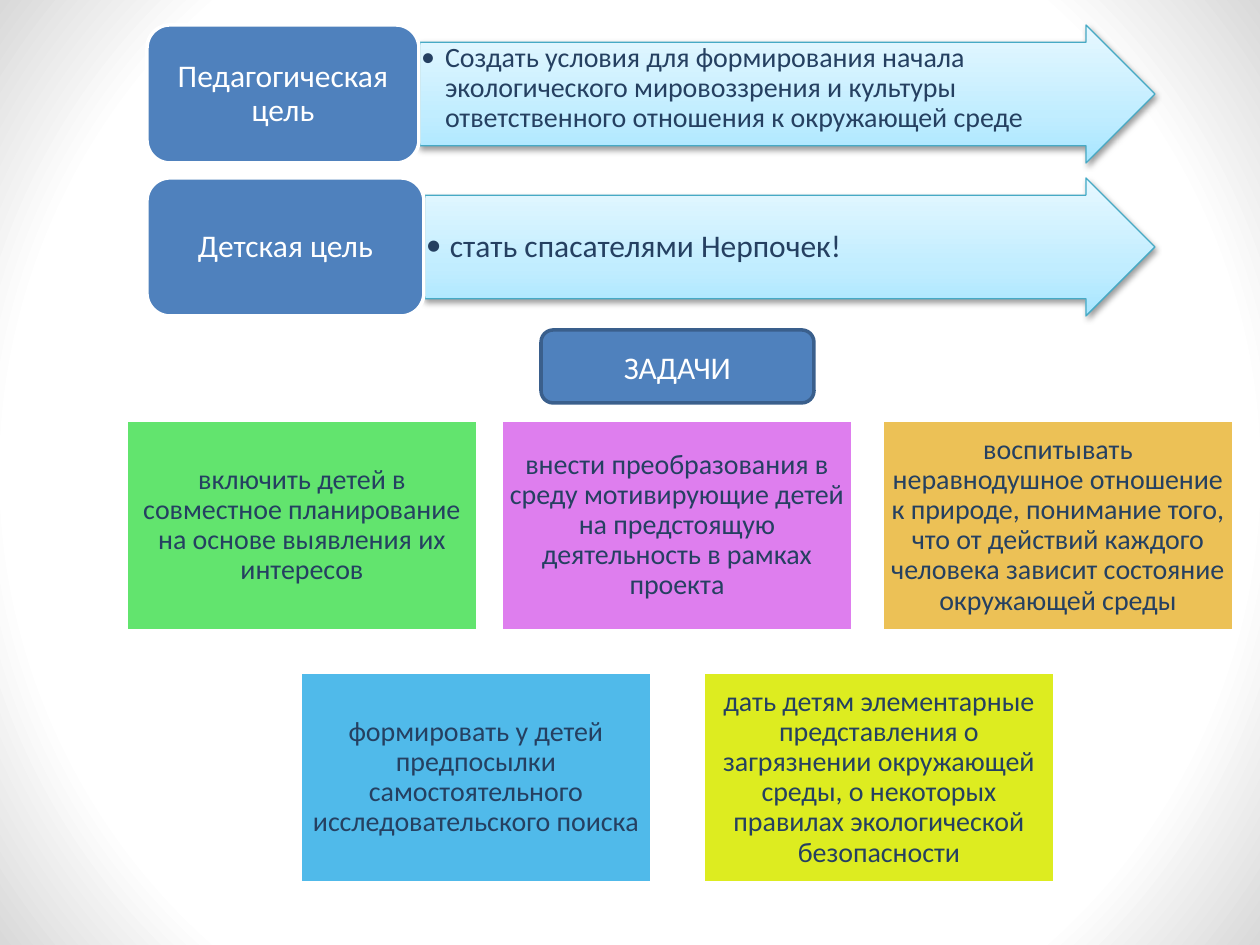
from lxml import etree
from pptx import Presentation
from pptx.dml.color import RGBColor
from pptx.enum.shapes import MSO_SHAPE
from pptx.enum.text import MSO_ANCHOR, PP_ALIGN
from pptx.oxml.ns import qn
from pptx.util import Emu, Pt

RECT, ROUNDED = MSO_SHAPE.RECTANGLE, MSO_SHAPE.ROUNDED_RECTANGLE
ARROW = MSO_SHAPE.RIGHT_ARROW
TOP, MIDDLE = MSO_ANCHOR.TOP, MSO_ANCHOR.MIDDLE
CENTER, LEFT = PP_ALIGN.CENTER, PP_ALIGN.LEFT

WIDTH, HEIGHT = 1260, 945
NAVY, BLUE, WHITE = "254061", "4F81BD", "FFFFFF"
FONT = "Calibri"

GOALS = [
    (25, 272, "Педагогическая цель", 16,
     "Создать условия для формирования начала экологического мировоззрения "
     "и культуры ответственного отношения к окружающей среде", TOP),
    (178, 277, "Детская цель", 18, "стать спасателями Нерпочек!", MIDDLE),
]
TASK_ROWS = [
    (420, [
        (126, "62E46E", "включить детей в совместное планирование на основе "
                        "выявления их интересов"),
        (501, "DE7EEE", "внести преобразования в среду мотивирующие детей на "
                        "предстоящую деятельность в рамках проекта"),
        (882, "ECC156", "воспитывать неравнодушное отношение к природе, "
                        "понимание того, что от действий каждого человека "
                        "зависит состояние окружающей среды"),
    ]),
    (672, [
        (300, "50BAEA", "формировать у детей предпосылки самостоятельного "
                        "исследовательского поиска"),
        (703, "DDEC20", "дать детям элементарные представления о загрязнении "
                        "окружающей среды, о некоторых правилах экологической "
                        "безопасности"),
    ]),
]


def px(length):
    return Emu(round(length * 914400 / 126))


def color(value):
    return RGBColor.from_string(value)


def add_child(parent, tag, **attributes):
    child = etree.SubElement(parent, qn(tag))
    for name, value in attributes.items():
        child.set(name, str(value))
    return child


def add_box(page, kind, box, fill=None, line=None, line_width=2):
    shape = page.shapes.add_shape(kind, *map(px, box))
    shape.shadow.inherit = False
    if fill:
        shape.fill.solid()
        shape.fill.fore_color.rgb = color(fill)
    if line:
        shape.line.color.rgb = color(line)
        shape.line.width = Pt(line_width)
    else:
        shape.line.fill.background()
    return shape


def set_gradient(shape, stops, angle=None):
    """Fill with (percent, colour) stops: linear at an angle, else from the centre."""
    shape.fill.gradient()
    gradient = shape._element.spPr.find(qn("a:gradFill"))
    for child in list(gradient):
        gradient.remove(child)
    stop_list = add_child(gradient, "a:gsLst")
    for percent, value in stops:
        stop = add_child(stop_list, "a:gs", pos=percent * 1000)
        add_child(stop, "a:srgbClr", val=value)
    if angle is None:
        circle = add_child(gradient, "a:path", path="circle")
        add_child(circle, "a:fillToRect", l=50000, t=50000, r=50000, b=50000)
    else:
        add_child(gradient, "a:lin", ang=angle * 60000, scaled=1)


def add_shadow(shape):
    effects = shape._element.spPr.find(qn("a:effectLst"))
    shadow = add_child(effects, "a:outerShdw", blurRad=40000, dist=20000,
                       dir=5400000, rotWithShape=0)
    black = add_child(shadow, "a:srgbClr", val="000000")
    add_child(black, "a:alpha", val=38000)


def write(shape, text, size=16, ink=NAVY, align=CENTER, anchor=MIDDLE,
          insets=(8, 8, 8, 8), spacing=0.9, bullet=False):
    frame = shape.text_frame
    frame.word_wrap = True
    frame.vertical_anchor = anchor
    (frame.margin_left, frame.margin_top,
     frame.margin_right, frame.margin_bottom) = map(px, insets)
    para = frame.paragraphs[0]
    para.alignment = align
    para.line_spacing = spacing
    if bullet:
        properties = para._p.get_or_add_pPr()
        properties.set("marL", str(px(24)))
        properties.set("indent", str(-px(24)))
        add_child(properties, "a:buFont", typeface=FONT)
        add_child(properties, "a:buChar", char="•")
    span = para.add_run()
    span.text = text
    span.font.name = FONT
    span.font.size = Pt(size)
    span.font.color.rgb = color(ink)


def add_backdrop(page):
    backdrop = add_box(page, RECT, (0, 0, WIDTH, HEIGHT))
    set_gradient(backdrop, [(79, WHITE), (100, "D9D9D9")])


def add_goal(page, box, label_width, label, size, goal, anchor):
    """Place a label and, to its right, an arrow that holds the goal."""
    left, top, width, height = box
    arrow = add_box(page, ARROW, (left + label_width + 1, top,
                                  width - label_width - 1, height),
                    line="46AAC5", line_width=0.75)
    arrow.adjustments[0] = 0.75
    set_gradient(arrow, [(0, "A7E6FF"), (35, "C1EDFF"), (100, "E7F8FF")], 270)
    add_shadow(arrow)
    write(arrow, goal, size=size, align=LEFT, anchor=anchor,
          insets=(1, 1, 35, 1), bullet=True)
    name = add_box(page, ROUNDED, (left, top, label_width, height), BLUE, WHITE)
    write(name, label, size=18, ink=WHITE, insets=(9, 5, 9, 5))


def add_heading(page, box):
    heading = add_box(page, ROUNDED, box, BLUE, "3A5F8C")
    write(heading, "ЗАДАЧИ", size=18, ink=WHITE, spacing=1.0)


def add_tasks(page, top, tasks):
    for left, fill, text in tasks:
        task = add_box(page, RECT, (left, top, 352, 211), fill, WHITE)
        write(task, text)


def main():
    deck = Presentation()
    deck.slide_width, deck.slide_height = px(WIDTH), px(HEIGHT)
    page = deck.slides.add_slide(deck.slide_layouts[6])
    add_backdrop(page)
    for top, *goal in GOALS:
        add_goal(page, (147, top, 1008, 138), *goal)
    for top, tasks in TASK_ROWS:
        add_tasks(page, top, tasks)
    add_heading(page, (541, 330, 273, 73))
    deck.save("out.pptx")


if __name__ == "__main__":
    main()
